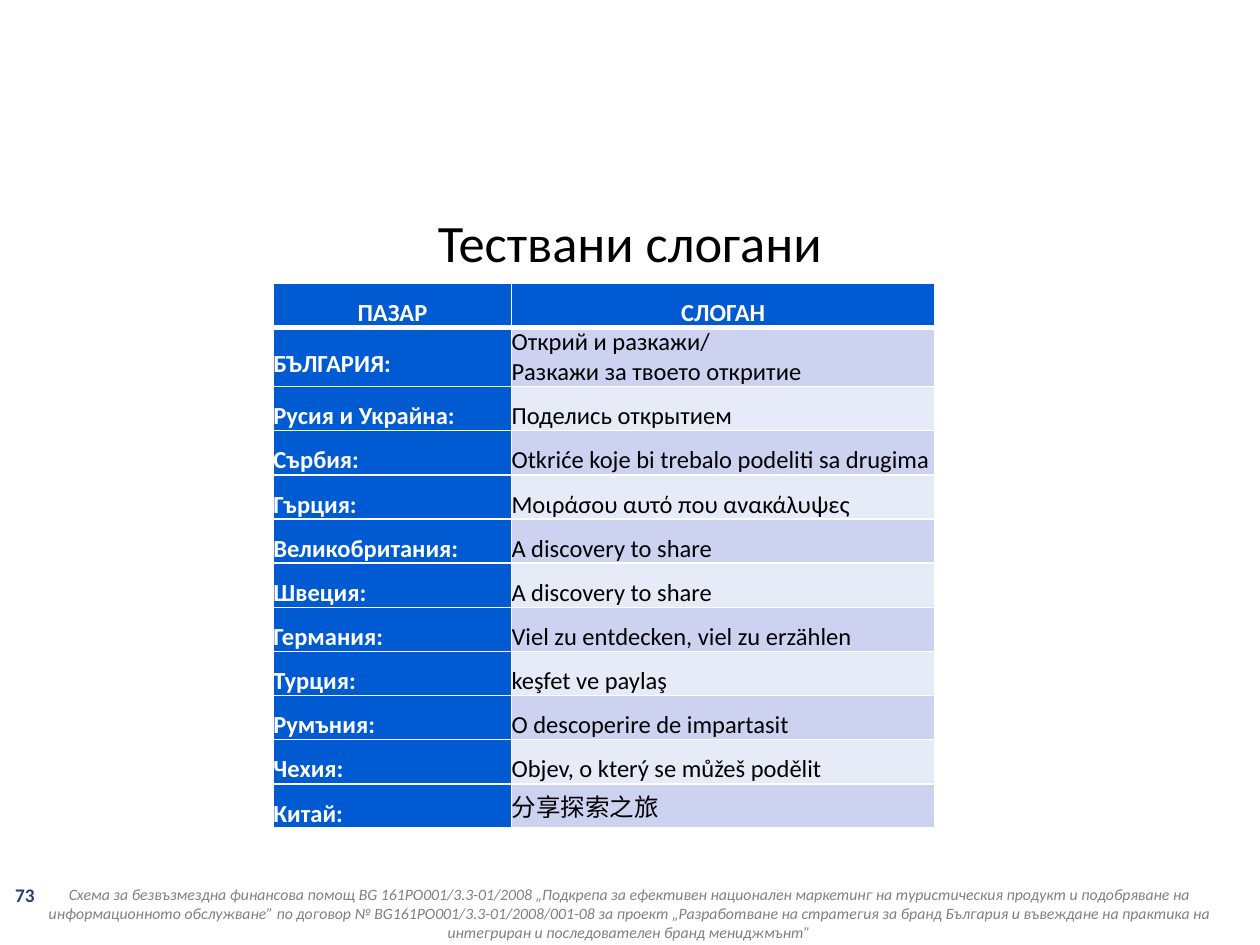
import pptx
import pptx.dml.color
import pptx.enum.text
import pptx.oxml
import pptx.oxml.ns
import pptx.util
from pptx.util import Inches

COLORS = {
    "header": "005BD3",
    "odd_row": "CCD2EF",
    "even_row": "E7EAF7",
    "white": "FFFFFF",
    "black": "000000",
    "footer": "808080",
    "number": "1F407B",
}
CENTER = pptx.enum.text.PP_ALIGN.CENTER
LEFT = pptx.enum.text.PP_ALIGN.LEFT
MIDDLE = pptx.enum.text.MSO_ANCHOR.MIDDLE
TOP = pptx.enum.text.MSO_ANCHOR.TOP

HEADINGS = ("ПАЗАР", "СЛОГАН")
SLOGANS = [
    ("БЪЛГАРИЯ:", "Открий и разкажи/\nРазкажи за твоето откритие"),
    ("Русия и Украйна:", "Поделись открытием"),
    ("Сърбия:", "Otkriće koje bi trebalo podeliti sa drugima"),
    ("Гърция:", "Μοιράσου αυτό που ανακάλυψες"),
    ("Великобритания:", "A discovery to share"),
    ("Швеция:", "А discovery to share"),
    ("Германия:", "Viel zu entdecken, viel zu erzählen"),
    ("Турция:", "keşfet ve paylaş"),
    ("Румъния:", "O descoperire de impartasit"),
    ("Чехия:", "Objev, o který se můžeš podělit"),
    ("Китай:", "分享探索之旅"),
]
SINGLE_SPACED_MARKETS = ("БЪЛГАРИЯ:", "Китай:")
FOOTER = (
    "Схема за безвъзмездна финансова помощ BG 161PO001/3.3-01/2008 "
    "„Подкрепа за ефективен национален маркетинг на туристическия продукт "
    "и подобряване на информационното обслужване” по договор "
    "№ BG161PO001/3.3-01/2008/001-08 за проект „Разработване на стратегия "
    "за бранд България и въвеждане на практика на интегриран "
    "и последователен бранд мениджмънт”"
)


def set_attributes(target, values):
    for name, value in values.items():
        setattr(target, name, value)


def write_text(text_frame, text, color, size, alignment=LEFT, spacing=1.0, **font):
    text_frame.text = text
    for paragraph in text_frame.paragraphs:
        set_attributes(paragraph, {"alignment": alignment, "line_spacing": spacing})
        values = {"name": "Calibri", "size": pptx.util.Pt(size), **font}
        for run in paragraph.runs:
            set_attributes(run.font, values)
            run.font.color.rgb = pptx.dml.color.RGBColor.from_string(COLORS[color])


def add_text(slide, position, text, color, size, anchor=TOP, **style):
    shape = slide.shapes.add_textbox(*map(Inches, position))
    set_attributes(shape.text_frame, {"word_wrap": True, "vertical_anchor": anchor})
    write_text(shape.text_frame, text, color, size, **style)
    return shape


def set_borders(cell, bottom_width):
    properties = cell._tc.get_or_add_tcPr()
    widths = {"lnL": 1, "lnR": 1, "lnT": 1, "lnB": bottom_width}
    for index, (side, width) in enumerate(widths.items()):
        border = pptx.oxml.parse_xml(
            f'<a:{side} {pptx.oxml.ns.nsdecls("a")} w="{pptx.util.Pt(width)}">'
            f'<a:solidFill><a:srgbClr val="{COLORS["white"]}"/></a:solidFill></a:{side}>'
        )
        properties.insert(index, border)


def format_cell(cell, text, fill, bottom_width=1, **style):
    margins = ("margin_left", "margin_right", "margin_top", "margin_bottom")
    set_attributes(cell, {"vertical_anchor": MIDDLE, **dict.fromkeys(margins, 0)})
    cell.fill.solid()
    cell.fill.fore_color.rgb = pptx.dml.color.RGBColor.from_string(COLORS[fill])
    write_text(cell.text_frame, text, size=14, **style)
    set_borders(cell, bottom_width)


def add_slogan_table(slide):
    row_count, row_height = len(SLOGANS) + 1, 0.22
    position = (2.17, 2.25, 5.25, row_count * row_height)
    table = slide.shapes.add_table(row_count, 2, *map(Inches, position)).table
    for column, width in zip(table.columns, (1.89, 3.36)):
        column.width = Inches(width)
    strong = {"color": "white", "bold": True, "spacing": 1.5}
    for column, heading in enumerate(HEADINGS):
        format_cell(table.cell(0, column), heading, "header", 3, alignment=CENTER, **strong)
    for row, (market, slogan) in enumerate(SLOGANS, start=1):
        format_cell(table.cell(row, 0), market, "header", **strong)
        fill = "odd_row" if row % 2 else "even_row"
        spacing = 1.0 if market in SINGLE_SPACED_MARKETS else 1.5
        format_cell(table.cell(row, 1), slogan, fill, color="black", bold=False, spacing=spacing)


def main():
    """Build the slide of tested slogans by market."""
    presentation = pptx.Presentation()
    set_attributes(presentation, {"slide_width": Inches(10), "slide_height": Inches(7.5)})
    slide = presentation.slides.add_slide(presentation.slide_layouts[6])
    add_text(slide, (0, 6.97, 9.98, 0.56), FOOTER, "footer", 9, alignment=CENTER, italic=True)
    number = add_text(slide, (0.04, 6.97, 0.46, 0.4), "73", "number", 11, bold=True)
    set_attributes(number.text_frame, {
        "margin_left": Inches(0.08), "margin_right": Inches(0.08),
        "margin_top": Inches(0.04), "margin_bottom": Inches(0.04),
    })
    add_text(slide, (0, 1.58, 10, 0.67), "Тествани слогани", "black", 30, MIDDLE, alignment=CENTER)
    add_slogan_table(slide)
    presentation.save("out.pptx")


if __name__ == "__main__":
    main()
